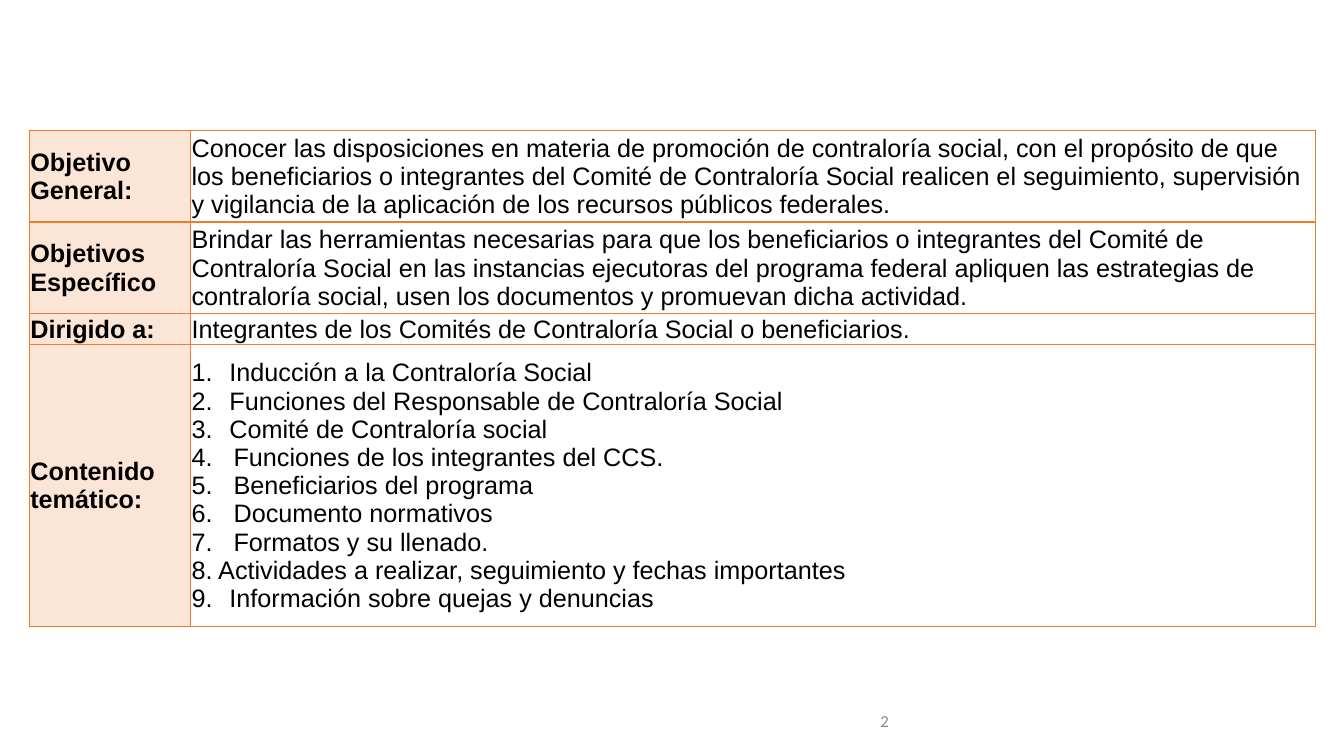
"""Build the slide with the objectives and topics of the social oversight training."""
from dataclasses import dataclass

from lxml.etree import SubElement
from pptx import Presentation
from pptx.dml.color import RGBColor
from pptx.enum.text import MSO_ANCHOR, PP_ALIGN
from pptx.oxml.ns import qn
from pptx.table import _Cell
from pptx.text.text import _Paragraph
from pptx.util import Pt

ORANGE = "ED7D31"
PEACH = "FBE5D6"
WHITE = "FFFFFF"
BLACK = "000000"
GRAY = "888888"


@dataclass(frozen=True)
class Line:
    """A paragraph, numbered when its number is above zero."""
    text: str
    number: int = 0
    indent: float = 27
    space_after: float = 0
    align: PP_ALIGN = PP_ALIGN.LEFT


@dataclass(frozen=True)
class Section:
    """A row of the table."""
    heading: str
    lines: tuple[Line, ...]
    height: float


SECTIONS = (
    Section("Objetivo General:", (Line(
        "Conocer las disposiciones en materia de promoción de contraloría social, "
        "con el propósito de que los beneficiarios o integrantes del Comité de "
        "Contraloría Social realicen el seguimiento, supervisión y vigilancia de la "
        "aplicación de los recursos públicos federales."),), 62.6),
    Section("Objetivos Específico", (Line(
        "Brindar las herramientas necesarias para que los beneficiarios o integrantes "
        "del Comité de Contraloría Social en las instancias ejecutoras del programa "
        "federal apliquen las estrategias de contraloría social, usen los documentos y "
        "promuevan dicha actividad."),), 62.6),
    Section("Dirigido a:", (Line(
        "Integrantes de los Comités de Contraloría Social o beneficiarios."),), 21.6),
    Section("Contenido temático:", (
        Line("Inducción a la Contraloría Social", 1),
        Line("Funciones del Responsable de Contraloría Social", 2),
        Line("Comité de Contraloría social", 3),
        Line("Funciones de los integrantes del CCS.", 4, 30),
        Line("Beneficiarios del programa", 5, 30),
        Line("Documento normativos", 6, 30),
        Line("Formatos y su llenado.", 7, 30),
        Line("8. Actividades a realizar, seguimiento y fechas importantes"),
        Line("Información sobre quejas y denuncias", 9, 27, 10, PP_ALIGN.JUSTIFY),
    ), 200.9),
)
COLUMN_WIDTHS = (115.2, 803.5)


def color(value: str) -> RGBColor:
    """Turn a hex string into a colour."""
    return RGBColor.from_string(value)


def add_run(paragraph: _Paragraph, text: str, size: float, font: str, ink: str,
            bold: bool = False) -> None:
    """Append a formatted run."""
    run = paragraph.add_run()
    run.text = text
    run.font.size = Pt(size)
    run.font.name = font
    run.font.bold = bold
    run.font.color.rgb = color(ink)


def number_paragraph(paragraph: _Paragraph, line: Line) -> None:
    """Give a paragraph a hanging automatic number."""
    properties = paragraph._p.get_or_add_pPr()
    properties.set("marL", str(Pt(line.indent)))
    properties.set("indent", str(-Pt(line.indent)))
    SubElement(properties, qn("a:buFont"), typeface="+mj-lt")
    SubElement(properties, qn("a:buAutoNum"), type="arabicPeriod",
               startAt=str(line.number))


def add_borders(cell: _Cell) -> None:
    """Draw the four sides of a cell."""
    properties = cell._tc.get_or_add_tcPr()
    for side in ("a:lnL", "a:lnR", "a:lnT", "a:lnB"):
        border = SubElement(properties, qn(side), w=str(Pt(1)))
        fill = SubElement(border, qn("a:solidFill"))
        SubElement(fill, qn("a:srgbClr"), val=ORANGE)


def fill_cell(cell: _Cell, lines: tuple[Line, ...], background: str, bold: bool) -> None:
    """Format a cell and write its lines."""
    add_borders(cell)
    cell.fill.solid()
    cell.fill.fore_color.rgb = color(background)
    cell.vertical_anchor = MSO_ANCHOR.MIDDLE
    cell.margin_left = cell.margin_right = cell.margin_top = Pt(0.7)
    cell.margin_bottom = Pt(0)
    for position, line in enumerate(lines):
        frame = cell.text_frame
        paragraph = frame.add_paragraph() if position else frame.paragraphs[0]
        paragraph.alignment = line.align
        if line.space_after:
            paragraph.space_after = Pt(line.space_after)
        if line.number:
            number_paragraph(paragraph, line)
        add_run(paragraph, line.text, 18, "Arial", BLACK, bold)


def main() -> None:
    """Create and save the presentation."""
    presentation = Presentation()
    presentation.slide_width, presentation.slide_height = Pt(960), Pt(540)
    slide = presentation.slides.add_slide(presentation.slide_layouts[6])

    page = slide.shapes.add_textbox(Pt(426), Pt(500.5), Pt(216), Pt(28.75)).text_frame
    page.word_wrap = True
    page.vertical_anchor = MSO_ANCHOR.MIDDLE
    page.paragraphs[0].alignment = PP_ALIGN.RIGHT
    add_run(page.paragraphs[0], "2", 12, "Calibri", GRAY)

    program = slide.shapes.add_table(
        len(SECTIONS), len(COLUMN_WIDTHS), Pt(21), Pt(93), Pt(sum(COLUMN_WIDTHS)),
        Pt(sum(section.height for section in SECTIONS))).table
    for column, width in zip(program.columns, COLUMN_WIDTHS):
        column.width = Pt(width)
    for row, section in zip(program.rows, SECTIONS):
        row.height = Pt(section.height)
        heading, content = row.cells
        fill_cell(heading, (Line(section.heading),), PEACH, True)
        fill_cell(content, section.lines, WHITE, False)
    presentation.save("out.pptx")


if __name__ == "__main__":
    main()
